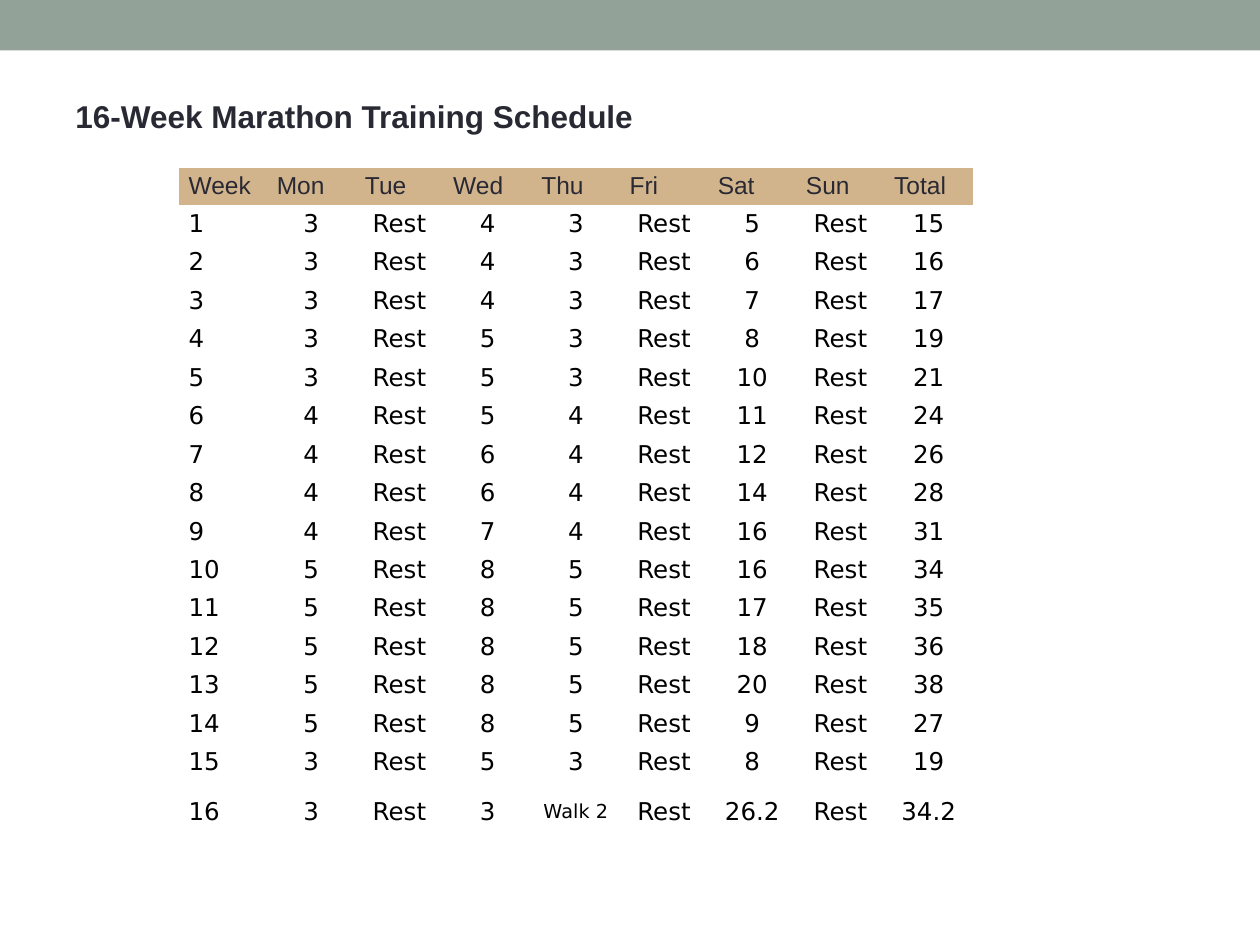
from typing import NamedTuple

from pptx import Presentation
from pptx.dml.color import RGBColor
from pptx.enum.shapes import MSO_SHAPE
from pptx.enum.text import MSO_ANCHOR, PP_ALIGN
from pptx.oxml.ns import qn
from pptx.util import Pt

RECTANGLE = MSO_SHAPE.RECTANGLE
MIDDLE = MSO_ANCHOR.MIDDLE
LEFT, CENTER = PP_ALIGN.LEFT, PP_ALIGN.CENTER

COLORS = {"bar": "93A299", "header": "D2B48C", "heading": "292934", "body": "000000"}
PLAIN_TABLE_STYLE = "{2D5ABB26-0587-4C30-8999-92F81FD0307C}"
COLUMN_WIDTH, ROW_HEIGHT, LAST_ROW_HEIGHT = 50.4, 19.44, 34.56
REST = "Rest"


class TextStyle(NamedTuple):
    font: str
    size: float
    color: str
    bold: bool = False


class Week(NamedTuple):
    monday: str
    wednesday: str
    thursday: str
    saturday: str
    total: str


TITLE = TextStyle("Arial", 18, "heading", True)
HEADER = TextStyle("Arial", 14, "heading")
BODY = TextStyle("DejaVu Sans", 14, "body")
SMALL = BODY._replace(size=11)

DAYS = ["Week", "Mon", "Tue", "Wed", "Thu", "Fri", "Sat", "Sun", "Total"]
WEEKS = [
    Week("3", "4", "3", "5", "15"),
    Week("3", "4", "3", "6", "16"),
    Week("3", "4", "3", "7", "17"),
    Week("3", "5", "3", "8", "19"),
    Week("3", "5", "3", "10", "21"),
    Week("4", "5", "4", "11", "24"),
    Week("4", "6", "4", "12", "26"),
    Week("4", "6", "4", "14", "28"),
    Week("4", "7", "4", "16", "31"),
    Week("5", "8", "5", "16", "34"),
    Week("5", "8", "5", "17", "35"),
    Week("5", "8", "5", "18", "36"),
    Week("5", "8", "5", "20", "38"),
    Week("5", "8", "5", "9", "27"),
    Week("3", "5", "3", "8", "19"),
    Week("3", "3", "Walk 2", "26.2", "34.2"),
]


def add_run(paragraph, text: str, style: TextStyle) -> None:
    run = paragraph.add_run()
    run.text = text
    run.font.name = style.font
    run.font.size = Pt(style.size)
    run.font.bold = style.bold
    run.font.color.rgb = RGBColor.from_string(COLORS[style.color])


def add_bar(slide) -> None:
    bar = slide.shapes.add_shape(RECTANGLE, Pt(0), Pt(0), Pt(720), Pt(28.8))
    bar.shadow.inherit = False
    bar.fill.solid()
    bar.fill.fore_color.rgb = RGBColor.from_string(COLORS["bar"])
    bar.line.fill.background()


def add_title(slide, text: str) -> None:
    box = slide.shapes.add_textbox(Pt(36), Pt(48.24), Pt(720), Pt(36))
    box.text_frame.word_wrap = True
    box.text_frame.vertical_anchor = MIDDLE
    add_run(box.text_frame.paragraphs[0], text, TITLE)


def fill_cell(cell, text: str, style: TextStyle, alignment, fill: str = "") -> None:
    cell.vertical_anchor = MIDDLE
    cell.margin_left = cell.margin_right = Pt(5.5)
    cell.margin_top = cell.margin_bottom = Pt(2.75)
    if fill:
        cell.fill.solid()
        cell.fill.fore_color.rgb = RGBColor.from_string(COLORS[fill])
    else:
        cell.fill.background()
    paragraph = cell.text_frame.paragraphs[0]
    paragraph.alignment = alignment
    add_run(paragraph, text, style)


def add_schedule(slide) -> None:
    frame = slide.shapes.add_table(
        len(WEEKS) + 1, len(DAYS), Pt(102.24), Pt(95.76),
        Pt(COLUMN_WIDTH * len(DAYS)), Pt(389.52),
    )
    table = frame.table
    table.first_row = table.horz_banding = False
    next(frame.element.iter(qn("a:tableStyleId"))).text = PLAIN_TABLE_STYLE
    for column in table.columns:
        column.width = Pt(COLUMN_WIDTH)
    for row in table.rows:
        row.height = Pt(ROW_HEIGHT)
    table.rows[len(WEEKS)].height = Pt(LAST_ROW_HEIGHT)

    # Header row
    for column, day in enumerate(DAYS):
        fill_cell(table.cell(0, column), day, HEADER, LEFT, "header")

    # One row per week, with rest on Tuesday, Friday and Sunday
    for number, week in enumerate(WEEKS, start=1):
        values = [str(number), week.monday, REST, week.wednesday, week.thursday,
                  REST, week.saturday, REST, week.total]
        for column, value in enumerate(values):
            style = SMALL if value.startswith("Walk") else BODY
            alignment = CENTER if column else LEFT
            fill_cell(table.cell(number, column), value, style, alignment)


def main() -> None:
    presentation = Presentation()
    presentation.slide_width, presentation.slide_height = Pt(720), Pt(540)
    slide = presentation.slides.add_slide(presentation.slide_layouts[6])
    add_bar(slide)
    add_schedule(slide)
    add_title(slide, "16-Week Marathon Training Schedule")
    presentation.save("out.pptx")


if __name__ == "__main__":
    main()
